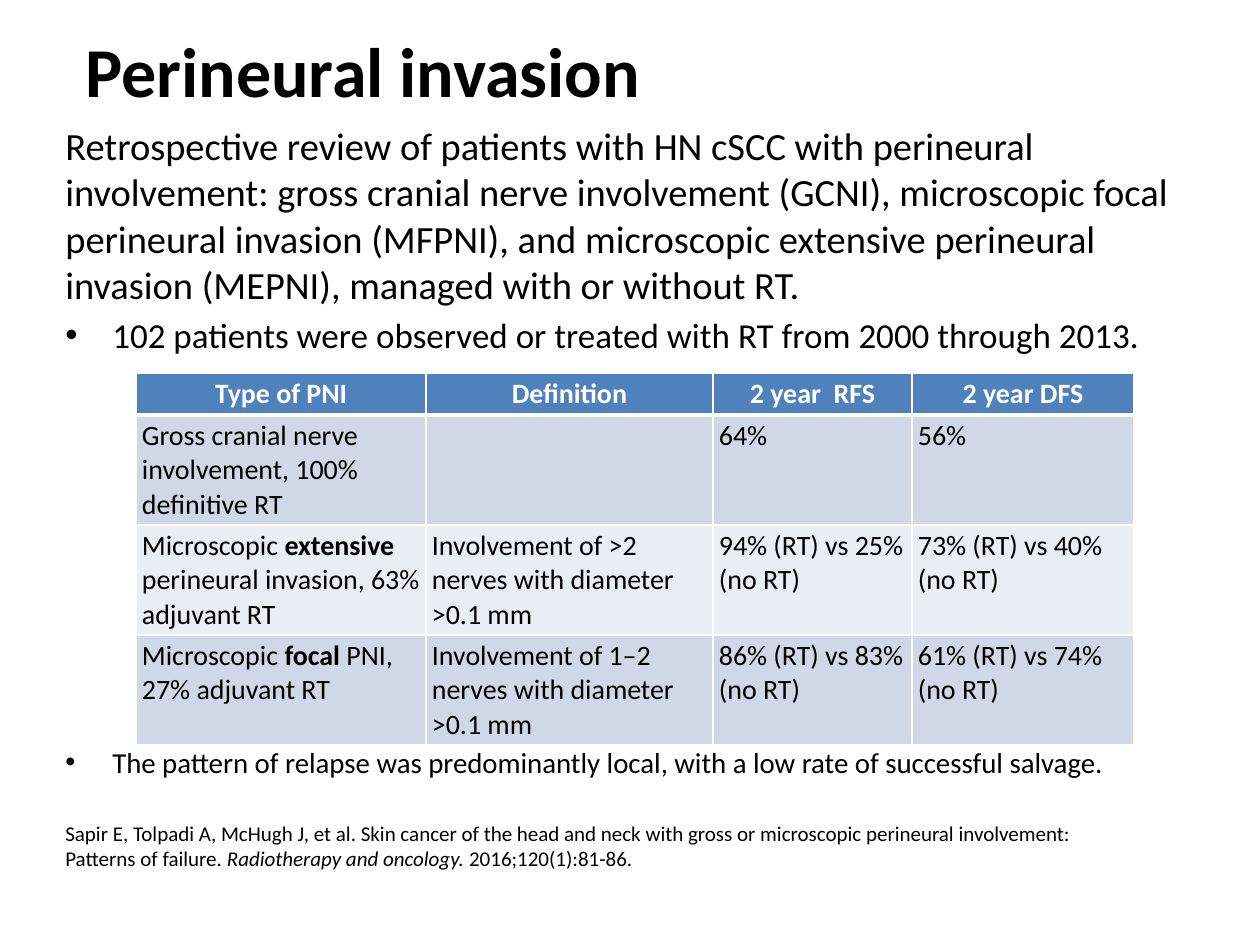
from dataclasses import dataclass

from lxml.etree import SubElement
from pptx import Presentation
from pptx.dml.color import RGBColor as Rgb
from pptx.enum.text import MSO_ANCHOR as Anchor, PP_ALIGN as Align
from pptx.oxml.ns import qn
from pptx.util import Pt

EMU_PER_PX = 914400 / 126


@dataclass(frozen=True)
class Theme:
    """Colours, font and type sizes of the slide."""
    font: str = "Calibri"
    ink: str = "000000"
    paper: str = "FFFFFF"
    header: str = "4F81BD"
    bands: tuple = ("D0D8E8", "E9EDF4")
    title: float = 40
    lead: float = 22
    bullet: float = 20
    finding: float = 16.5
    cell: float = 16
    citation: float = 12


THEME = Theme()

HEADINGS = ["Type of PNI", "Definition", "2 year  RFS", "2 year DFS"]
OUTCOMES = [
    ["Gross cranial nerve involvement, 100% definitive RT", "", "64%", "56%"],
    [["Microscopic ", ("extensive", "bold"), " perineural invasion, 63% adjuvant RT"],
     "Involvement of >2 nerves with diameter >0.1 mm",
     "94% (RT) vs 25% (no RT)", "73% (RT) vs 40% (no RT)"],
    [["Microscopic ", ("focal", "bold"), " PNI, 27% adjuvant RT"],
     "Involvement of 1–2 nerves with diameter >0.1 mm",
     "86% (RT) vs 83% (no RT)", "61% (RT) vs 74% (no RT)"],
]


def px(length):
    """Turn pixels into EMU."""
    return round(length * EMU_PER_PX)


def write(frame, text, size, color=THEME.ink, bold=False, align=Align.LEFT,
          before=0, bullet=False, first=True):
    """Write one paragraph; text is a string or a list of plain and (words, style) parts."""
    paragraph = frame.paragraphs[0] if first else frame.add_paragraph()
    if bullet:
        props = paragraph._p.get_or_add_pPr()
        props.set("marL", str(px(47)))
        props.set("indent", str(px(-47)))
        SubElement(props, qn("a:buFont"), typeface="Arial")
        SubElement(props, qn("a:buChar"), char="•")
    paragraph.alignment = align
    if before:
        paragraph.space_before = Pt(before)
    font = paragraph.font
    font.name, font.size, font.bold = THEME.font, Pt(size), bold
    for part in [text] if isinstance(text, str) else text:
        words, style = (part, None) if isinstance(part, str) else part
        if not words:
            continue
        run = paragraph.add_run()
        run.text = words
        run.font.name, run.font.size = THEME.font, Pt(size)
        run.font.bold = bold or style == "bold"
        run.font.italic = style == "italic"
        run.font.color.rgb = Rgb.from_string(color)


def text_frame(slide, box):
    """Add a wrapping text box and return its frame."""
    frame = slide.shapes.add_textbox(*map(px, box)).text_frame
    frame.word_wrap = True
    return frame


def add_title(slide, box):
    """Place the slide title."""
    write(text_frame(slide, box), "Perineural invasion", THEME.title, bold=True)


def add_study(slide, box):
    """Place the study summary, leaving room for the table between its bullets."""
    study = text_frame(slide, box)
    write(study, "Retrospective review of patients with HN cSCC with perineural involvement: "
          "gross cranial nerve involvement (GCNI), microscopic focal perineural invasion "
          "(MFPNI), and microscopic extensive perineural invasion (MEPNI), managed with "
          "or without RT.", THEME.lead)
    write(study, "102 patients were observed or treated with RT from 2000 through 2013.",
          THEME.bullet, before=4, bullet=True, first=False)
    write(study, "The pattern of relapse was predominantly local, with a low rate of "
          "successful salvage.", THEME.finding, before=222, bullet=True, first=False)


def style_cell(cell, fill, bottom=1):
    """Set the insets, white borders and fill of a table cell."""
    cell.margin_left = cell.margin_right = px(6)
    cell.margin_top = cell.margin_bottom = px(4)
    props = cell._tc.get_or_add_tcPr()
    for side, width in (("L", 1), ("R", 1), ("T", 1), ("B", bottom)):
        border = SubElement(props, qn(f"a:ln{side}"), w=str(Pt(width)))
        paint = SubElement(border, qn("a:solidFill"))
        SubElement(paint, qn("a:srgbClr"), val=THEME.paper)
    cell.fill.solid()
    cell.fill.fore_color.rgb = Rgb.from_string(fill)


def add_outcomes(slide, box):
    """Place the table of outcomes by type of invasion."""
    table = slide.shapes.add_table(len(OUTCOMES) + 1, len(HEADINGS), *map(px, box)).table
    for column, width in zip(table.columns, (290, 287, 199, 222)):
        column.width = px(width)
    for row, height in zip(table.rows, (42, 110, 110, 110)):
        row.height = px(height)
    for column, heading in enumerate(HEADINGS):
        cell = table.cell(0, column)
        style_cell(cell, THEME.header, bottom=3)
        cell.vertical_anchor = Anchor.MIDDLE
        write(cell.text_frame, heading, THEME.cell, THEME.paper, bold=True, align=Align.CENTER)
    for row, outcome in enumerate(OUTCOMES, 1):
        for column, finding in enumerate(outcome):
            cell = table.cell(row, column)
            style_cell(cell, THEME.bands[(row - 1) % 2], bottom=1)
            write(cell.text_frame, finding, THEME.cell)


def add_citation(slide, box):
    """Place the literature reference."""
    write(text_frame(slide, box), [
        "Sapir E, Tolpadi A, McHugh J, et al. Skin cancer of the head and neck with gross "
        "or microscopic perineural involvement: Patterns of failure. ",
        ("Radiotherapy and oncology. ", "italic"), "2016;120(1):81-86."], THEME.citation)


def main():
    """Build and save the slide."""
    deck = Presentation()
    deck.slide_width, deck.slide_height = px(1260), px(945)
    slide = deck.slides.add_slide(deck.slide_layouts[6])
    add_title(slide, (73, 21, 1086, 86))
    add_study(slide, (53, 116, 1169, 472))
    add_citation(slide, (53, 814, 1086, 63))
    add_outcomes(slide, (136, 373, 998, 372))
    deck.save("out.pptx")


if __name__ == "__main__":
    main()
